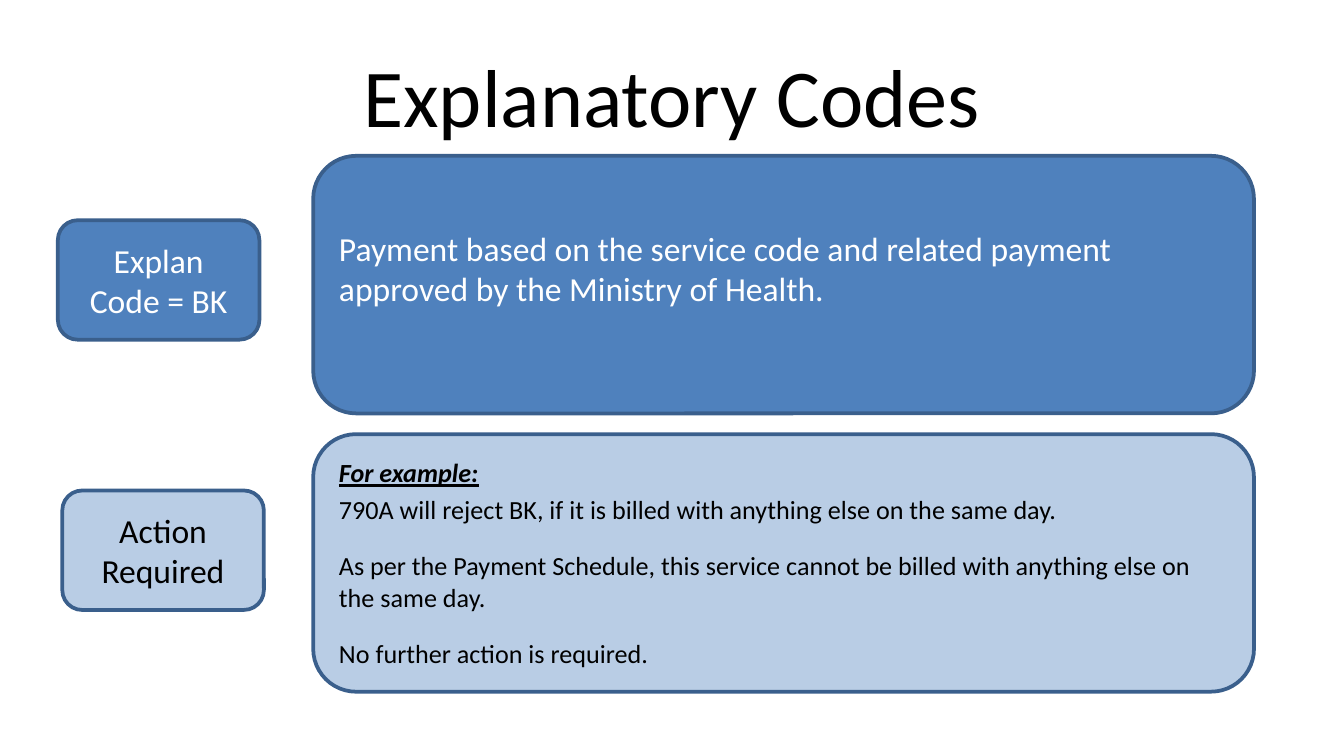
from pptx import Presentation
from pptx.dml.color import RGBColor
from pptx.enum import shapes, text
from pptx.util import Pt

BLUE = RGBColor(0x4F, 0x81, 0xBD)
PALE = RGBColor(0xB9, 0xCD, 0xE5)
EDGE = RGBColor(0x3A, 0x5F, 0x8C)
WHITE = RGBColor(0xFF, 0xFF, 0xFF)
BLACK = RGBColor(0, 0, 0)

# Content: paragraphs are (wording, space before, emphasised)
TITLE = "Explanatory Codes"
ROWS = [
    dict(label="Explan Code = BK", label_left=31, label_top=118, top=83.5,
         fill=BLUE, color=WHITE, size=18, bottom_inset=21.6,
         detail=[("Payment based on the service code and related payment "
                  "approved by the Ministry of Health.", 0, False)]),
    dict(label="Action Required", label_left=33.4, label_top=262.8, top=232.6,
         fill=PALE, color=BLACK, size=14, bottom_inset=3.6,
         detail=[("For example:", 0, True),
                 ("790A will reject BK, if it is billed with anything else "
                  "on the same day.", 2.8, False),
                 ("As per the Payment Schedule, this service cannot be billed "
                  "with anything else on the same day.", 13.4, False),
                 ("No further action is required.", 13.4, False)]),
]

# Layout in points
LABEL_SIZE = (108, 64)
DETAIL_LEFT, DETAIL_SIZE = 167.8, (504, 138)


def write(para, wording, size=18, color=BLACK, align=text.PP_ALIGN.CENTER,
          before=0, emphasis=False):
    para.alignment = align
    para.space_before = Pt(before)
    span = para.add_run()
    span.text = wording
    font = span.font
    font.name, font.size = "Calibri", Pt(size)
    font.color.rgb = color
    font.bold = font.italic = font.underline = emphasis


def add_panel(page, left, top, size, fill):
    box = page.shapes.add_shape(shapes.MSO_SHAPE.ROUNDED_RECTANGLE,
                                Pt(left), Pt(top), *map(Pt, size))
    box.shadow.inherit = False
    box.fill.solid()
    box.fill.fore_color.rgb = fill
    box.line.color.rgb = EDGE
    box.line.width = Pt(2)
    box.text_frame.word_wrap = True
    box.text_frame.vertical_anchor = text.MSO_ANCHOR.MIDDLE
    return box


deck = Presentation()
deck.slide_width, deck.slide_height = Pt(720), Pt(405)
page = deck.slides.add_slide(deck.slide_layouts[5])

# Title
title = page.shapes.title
title.left, title.top, title.width, title.height = map(Pt, (36, 16.6, 648, 67.7))
title.text_frame.vertical_anchor = text.MSO_ANCHOR.MIDDLE
write(title.text_frame.paragraphs[0], TITLE, size=44)

# Label and detail panel of each row
for row in ROWS:
    label = add_panel(page, row["label_left"], row["label_top"], LABEL_SIZE, row["fill"])
    write(label.text_frame.paragraphs[0], row["label"], color=row["color"])

    frame = add_panel(page, DETAIL_LEFT, row["top"], DETAIL_SIZE, row["fill"]).text_frame
    frame.margin_bottom = Pt(row["bottom_inset"])
    for index, (wording, before, emphasis) in enumerate(row["detail"]):
        para = frame.add_paragraph() if index else frame.paragraphs[0]
        write(para, wording, size=row["size"], color=row["color"],
              align=text.PP_ALIGN.LEFT, before=before, emphasis=emphasis)

deck.save("out.pptx")
